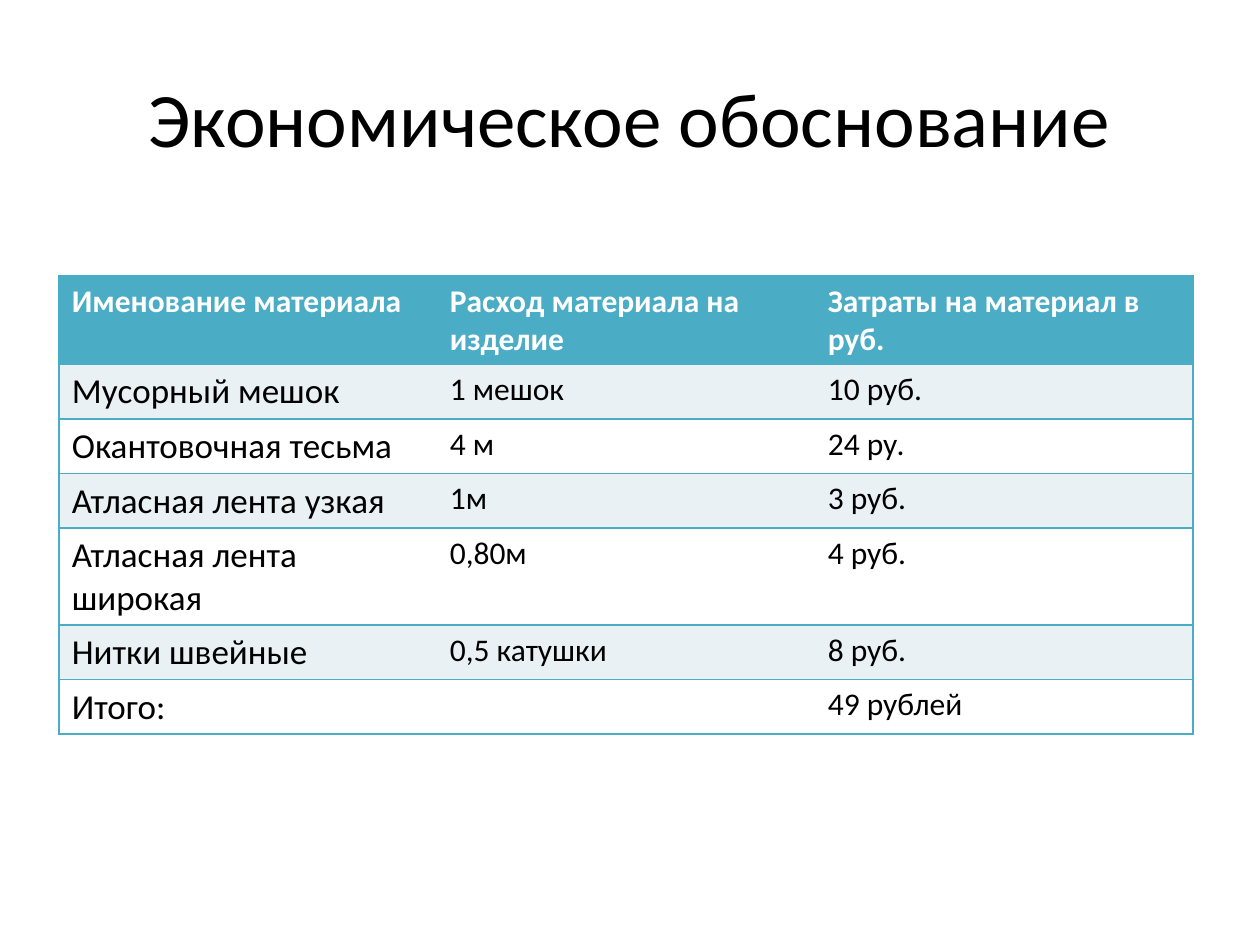
import dataclasses

import pptx
import pptx.dml.color
import pptx.enum.text
import pptx.oxml
import pptx.oxml.ns
import pptx.util

Inches = pptx.util.Inches
Pt = pptx.util.Pt


@dataclasses.dataclass(frozen=True)
class Theme:
    font: str = "Calibri"
    ink: str = "000000"
    accent: str = "4BACC6"
    band: str = "E9F1F5"
    paper: str = "FFFFFF"
    title_size: int = 44
    name_size: int = 20
    cell_size: int = 18
    border: int = 1


THEME = Theme()

COSTS = [
    ("Именование материала", "Расход материала на изделие", "Затраты на материал в руб."),
    ("Мусорный мешок", "1 мешок", "10 руб."),
    ("Окантовочная тесьма", "4 м", "24 ру."),
    ("Атласная лента узкая", "1м", "3 руб."),
    ("Атласная лента широкая", "0,80м", "4 руб."),
    ("Нитки швейные", "0,5 катушки", "8 руб."),
    ("Итого:", "", "49 рублей"),
]


def rgb(color):
    return pptx.dml.color.RGBColor.from_string(color)


def format_font(font, color, size, bold=False):
    formats = {"name": THEME.font, "size": Pt(size), "bold": bold}
    for attribute, value in formats.items():
        setattr(font, attribute, value)
    font.color.rgb = rgb(color)


def set_borders(cell, visible_sides):
    """Draw the given sides (of L, R, T, B) and clear the others."""
    properties = cell._tc.get_or_add_tcPr()
    solid = f'<a:solidFill><a:srgbClr val="{THEME.accent}"/></a:solidFill>'
    for position, side in enumerate("LRTB"):
        paint = solid if side in visible_sides else "<a:noFill/>"
        line = pptx.oxml.parse_xml(
            f'<a:ln{side} {pptx.oxml.ns.nsdecls("a")} w="{Pt(THEME.border)}">{paint}</a:ln{side}>'
        )
        properties.insert(position, line)


def add_title(slide, left, top, width, height, text):
    title = slide.shapes.add_textbox(left, top, width, height).text_frame
    title.word_wrap = True
    title.vertical_anchor = pptx.enum.text.MSO_ANCHOR.MIDDLE
    heading = title.paragraphs[0]
    heading.alignment = pptx.enum.text.PP_ALIGN.CENTER
    heading.text = text
    format_font(heading.runs[0].font, THEME.ink, THEME.title_size)


def add_cost_table(slide, left, top, width, row_height, costs):
    last_column = len(costs[0]) - 1
    table = slide.shapes.add_table(
        len(costs), len(costs[0]), left, top, width, row_height * len(costs)
    ).table

    for row, values in enumerate(costs):
        is_header = row == 0
        if is_header:
            fill, color = THEME.accent, THEME.paper
        else:
            fill, color = (THEME.band if row % 2 else THEME.paper), THEME.ink

        for column, value in enumerate(values):
            cell = table.cell(row, column)
            cell.fill.solid()
            cell.fill.fore_color.rgb = rgb(fill)
            # Horizontal rules everywhere, vertical ones only outside
            outer = {0: "L", last_column: "R"}.get(column, "")
            set_borders(cell, "TB" + outer)

            is_name = column == 0 and not is_header
            size = THEME.name_size if is_name else THEME.cell_size
            cell.text = value
            format_font(cell.text_frame.paragraphs[0].font, color, size, is_header)
            for run in cell.text_frame.paragraphs[0].runs:
                format_font(run.font, color, size, is_header)


def main():
    deck = pptx.Presentation()
    deck.slide_width, deck.slide_height = Inches(10), Inches(7.5)
    slide = deck.slides.add_slide(deck.slide_layouts[6])

    # Heading
    add_title(slide, Inches(0.5), Inches(0.3), Inches(9), Inches(1.25),
              "Экономическое обоснование")
    # Material costs
    add_cost_table(slide, Inches(0.47), Inches(2.19), Inches(9), Inches(0.41), COSTS)

    deck.save("out.pptx")


if __name__ == "__main__":
    main()
